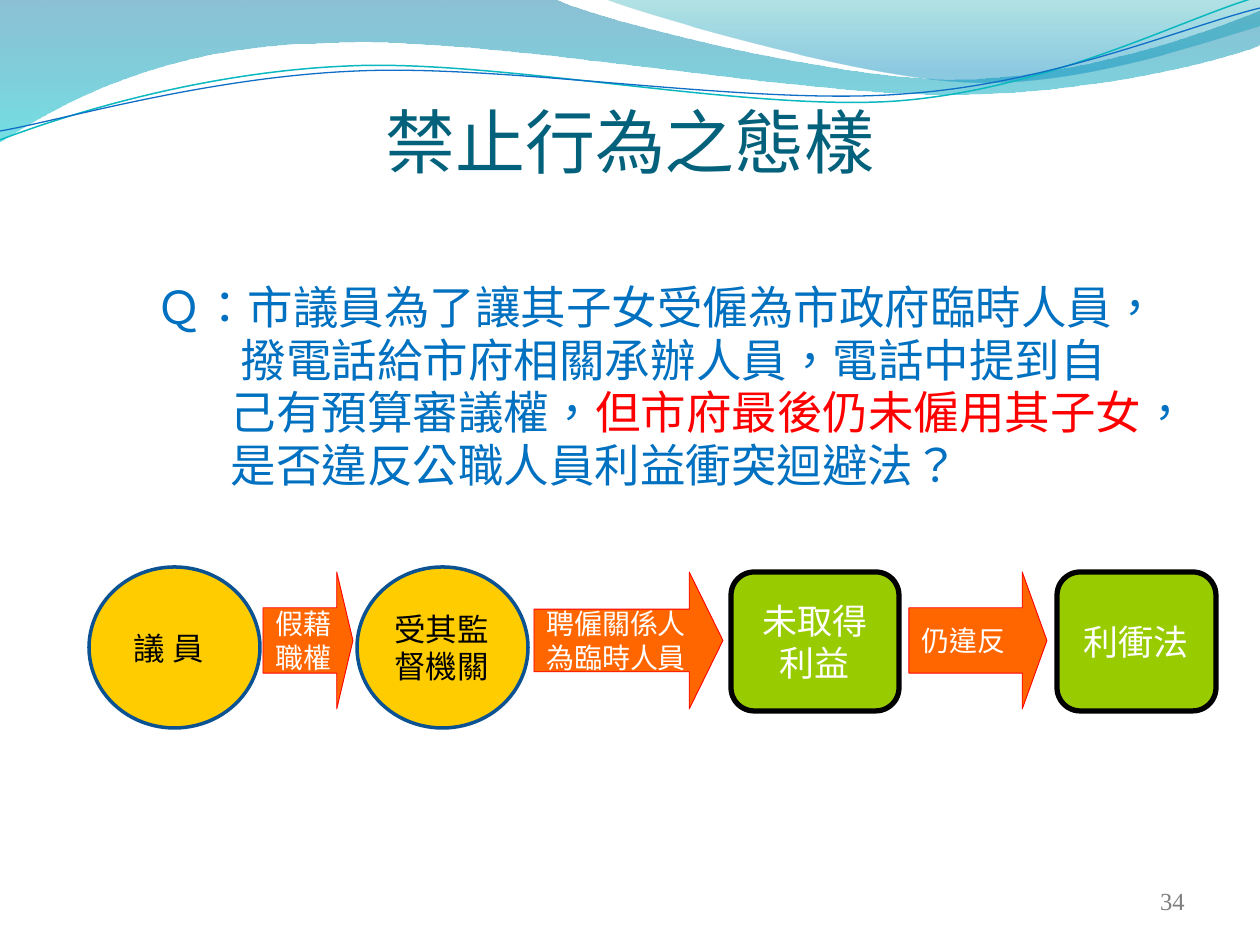
import math

from lxml import etree
from pptx import Presentation
from pptx.dml.color import RGBColor
from pptx.enum.shapes import MSO_SHAPE
from pptx.enum.text import MSO_ANCHOR, MSO_AUTO_SIZE, PP_ALIGN
from pptx.oxml.ns import qn
from pptx.util import Emu, Pt

EMU_PER_PX = 914400 / 126
CJK_FONT = "Noto Sans CJK SC"
TITLE_AND_CONTENT = 1
CURVE_TILT = -2.7
CURVE_CENTER = (629, 73)

LEFT, CENTER, RIGHT = PP_ALIGN.LEFT, PP_ALIGN.CENTER, PP_ALIGN.RIGHT
MIDDLE, BOTTOM = MSO_ANCHOR.MIDDLE, MSO_ANCHOR.BOTTOM
NO_AUTOFIT = MSO_AUTO_SIZE.NONE
ELLIPSE, ARROW = MSO_SHAPE.OVAL, MSO_SHAPE.RIGHT_ARROW
ROUNDED = MSO_SHAPE.ROUNDED_RECTANGLE

COLORS = {
    "title": "04617B", "question": "0070C0", "emphasis": "FF0000",
    "white": "FFFFFF", "black": "000000", "number": "7F7F7F",
    "party": "FFCC00", "party_line": "0B5292",
    "action": "FF6600", "action_line": "FF0000", "outcome": "99CC00",
    "wave_top": "0074A1", "wave_bottom": "00C6CF",
    "crest_top": "00A1A9", "crest_bottom": "008BBF",
    "teal_line": "0AB8BF", "blue_line": "0F6FC6",
}

# A step of one point is a straight line; a step of three is a Bézier curve.
WAVE = [[(0, 0)], [(554, -1)],
        [(600, 21), (837, 79), (955, 79)],
        [(1074, 79), (1207, 33), (1260, 11)],
        [(1261, 45)],
        [(1239, 55), (1096, 96), (940, 94)],
        [(784, 94), (481, 35), (324, 43)],
        [(163, 45), (58, 105), (-1, 142)],
        [(0, 0)]]
CREST = [[(604, -1)],
         [(641, 14), (859, 78), (969, 82)],
         [(1079, 87), (1211, 40), (1260, 26)],
         [(1260, 0)], [(604, -1)]]
TEAL_CURVE = [[(0, 140)],
              [(60, 117), (199, 72), (349, 66)],
              [(498, 59), (747, 112), (898, 101)],
              [(1050, 89), (1182, 19), (1257, -3)]]
BLUE_CURVE = [[(0, 131)],
              [(59, 121), (207, 77), (357, 71)],
              [(508, 64), (751, 106), (903, 94)],
              [(1053, 84), (1186, 26), (1260, 8)]]

QUESTION = [
    ("Ｑ：市議員為了讓其子女受僱為市政府臨時人員， 撥電話給市府相關承辦人員，"
     "電話中提到自己有預算審議權，", "question"),
    ("但市府最後仍未僱用其子女", "emphasis"),
    ("，是否違反公職人員利益衝突迴避法？", "question"),
]

PARTIES = [(89, " 議 員"), (357, "受其監督機關")]
ACTIONS = [(263, 90, (0.477, 0.18), "假藉\n職權"),
           (534, 189, (0.457, 0.246), "聘僱關係人\n為臨時人員"),
           (909, 138, (0.477, 0.18), "仍違反")]
OUTCOMES = [(731, 168, "未取得\n利益"), (1057, 159, "利衝法")]


def px(length):
    return Emu(round(length * EMU_PER_PX))


def color(name):
    return RGBColor.from_string(COLORS[name])


def place(item, left, top, width, height):
    item.left, item.top = px(left), px(top)
    item.width, item.height = px(width), px(height)


def style_span(span, size, color_name, font=CJK_FONT):
    span.font.size = Pt(size)
    span.font.name = font
    span.font.color.rgb = color(color_name)
    properties = span.font._element
    properties.set("lang", "zh-TW")
    etree.SubElement(properties, qn("a:ea")).set("typeface", CJK_FONT)


def style_text(frame, size, color_name, align=LEFT, anchor=MIDDLE, font=CJK_FONT):
    frame.vertical_anchor = anchor
    for para in frame.paragraphs:
        para.alignment = align
        for span in para.runs:
            style_span(span, size, color_name, font)


def hang(para, indent):
    """Indent the paragraph but start its first line at the margin."""
    properties = para._p.get_or_add_pPr()
    properties.set("marL", str(px(indent)))
    properties.set("indent", str(-px(indent)))


def turn(point, degrees):
    """Turn a point clockwise about the center of the curves."""
    angle = math.radians(degrees)
    x, y = (value - middle for value, middle in zip(point, CURVE_CENTER))
    return (CURVE_CENTER[0] + x * math.cos(angle) - y * math.sin(angle),
            CURVE_CENTER[1] + x * math.sin(angle) + y * math.cos(angle))


def trace(page, steps, close=False):
    """Draw the steps as a freeform, joining each three points into a Bézier curve."""
    start, *points = [tuple(map(px, point)) for step in steps for point in step]
    builder = page.shapes.build_freeform(*start)
    builder.add_line_segments(points, close=close)
    shape = builder.convert_to_shape()
    shape.shadow.inherit = False
    lines = iter(list(shape._element.iter(qn("a:lnTo"))))
    for step in steps[1:]:
        first, *others = [next(lines) for _ in step]
        if others:
            first.tag = qn("a:cubicBezTo")
        for line in others:
            first.append(line[0])
            line.getparent().remove(line)
    return shape


def add_wave(page, steps, stops):
    """Add a gradient area; each stop is (position, color name, opacity percent)."""
    shape = trace(page, steps, close=True)
    shape.line.fill.background()
    shape.fill.gradient()
    shape.fill.gradient_angle = 270
    for stop, (position, name, opacity) in zip(shape.fill.gradient_stops, stops):
        stop.position = position
        stop.color.rgb = color(name)
        alpha = etree.SubElement(stop._gs[0], qn("a:alpha"))
        alpha.set("val", str(opacity * 1000))


def add_curve(page, steps, name, width):
    level = [[turn(point, -CURVE_TILT) for point in step] for step in steps]
    shape = trace(page, level)
    shape.rotation = CURVE_TILT
    shape.fill.background()
    shape.line.color.rgb = color(name)
    shape.line.width = Pt(width)


def add_title(page, text):
    title = page.shapes.title
    place(title, 42, 32, 1176, 157)
    title.text_frame.text = text
    style_text(title.text_frame, 40, "title", CENTER, BOTTOM, "Arial")


def add_question(page):
    body = page.placeholders[1]
    place(body, 144, 275, 1012, 224)
    body.text_frame.auto_size = NO_AUTOFIT
    para = body.text_frame.paragraphs[0]
    para.line_spacing = Pt(30)
    para.space_before = Pt(0)
    hang(para, 74)
    etree.SubElement(para._p.get_or_add_pPr(), qn("a:buNone"))
    for text, name in QUESTION:
        span = para.add_run()
        span.text = text
        style_span(span, 26, name)


def add_node(page, kind, box, text, fill, line, line_width):
    node = page.shapes.add_shape(kind, *map(px, box))
    node.shadow.inherit = False
    node.fill.solid()
    node.fill.fore_color.rgb = color(fill)
    node.line.color.rgb = color(line)
    node.line.width = Pt(line_width)
    node.text_frame.text = text
    return node


def add_party(page, left, text):
    node = add_node(page, ELLIPSE, (left, 567, 171, 161), text, "party", "party_line", 2)
    style_text(node.text_frame, 18, "black")


def add_action(page, left, width, adjustments, text):
    node = add_node(page, ARROW, (left, 572, width, 137), text, "action", "action_line", 0.5)
    for i, value in enumerate(adjustments):
        node.adjustments[i] = value
    style_text(node.text_frame, 16, "white")
    for para in node.text_frame.paragraphs:
        hang(para, 48)


def add_outcome(page, left, width, text):
    node = add_node(page, ROUNDED, (left, 572, width, 139), text, "outcome", "black", 3)
    node.text_frame.word_wrap = False
    style_text(node.text_frame, 20, "white", CENTER)


def add_page_number(page, text):
    box = page.shapes.add_textbox(px(903), px(876), px(294), px(50))
    box.text_frame.word_wrap = True
    box.text_frame.text = text
    style_text(box.text_frame, 14, "number", RIGHT, font="Times New Roman")


def main():
    deck = Presentation()
    deck.slide_width, deck.slide_height = px(1260), px(945)
    page = deck.slides.add_slide(deck.slide_layouts[TITLE_AND_CONTENT])
    add_wave(page, WAVE, [(0, "wave_top", 45), (1, "wave_bottom", 55)])
    add_wave(page, CREST, [(0, "crest_top", 30), (0.8, "crest_bottom", 45)])
    add_curve(page, TEAL_CURVE, "teal_line", 0.85)
    add_curve(page, BLUE_CURVE, "blue_line", 0.75)
    add_title(page, "禁止行為之態樣")
    add_question(page)
    for adder, rows in ((add_party, PARTIES), (add_action, ACTIONS), (add_outcome, OUTCOMES)):
        for row in rows:
            adder(page, *row)
    add_page_number(page, "34")
    deck.save("out.pptx")


if __name__ == "__main__":
    main()
